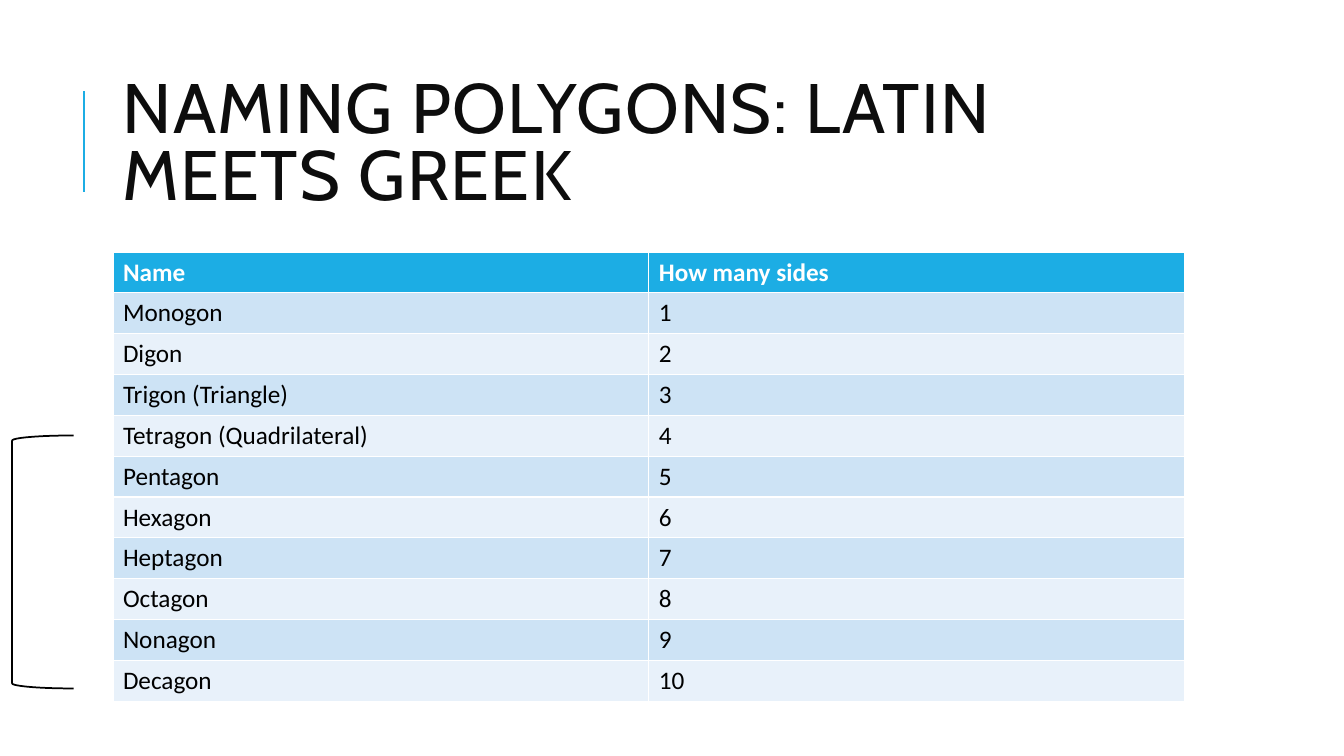
from lxml import etree
from pptx import Presentation
from pptx.dml.color import RGBColor
from pptx.enum.shapes import MSO_CONNECTOR, MSO_SHAPE
from pptx.enum.text import MSO_ANCHOR
from pptx.oxml.ns import qn
from pptx.util import Inches, Pt

BLUE = RGBColor(0x1C, 0xAD, 0xE4)
BAND_DARK = RGBColor(0xCD, 0xE3, 0xF5)
BAND_LIGHT = RGBColor(0xE8, 0xF1, 0xFA)
INK = RGBColor(0x0D, 0x0D, 0x0D)
BLACK = RGBColor(0, 0, 0)
WHITE = RGBColor(0xFF, 0xFF, 0xFF)

POLYGONS = ["Monogon", "Digon", "Trigon (Triangle)", "Tetragon (Quadrilateral)",
            "Pentagon", "Hexagon", "Heptagon", "Octagon", "Nonagon", "Decagon"]


def add_run(p, text, **fmt):
    r = p.add_run()
    r.text = text
    color = fmt.pop("color")
    for name, value in fmt.items():
        setattr(r.font, name, value)
    r.font.color.rgb = color
    return r


prs = Presentation()
prs.slide_width, prs.slide_height = Inches(13.33), Inches(7.5)
s = prs.slides.add_slide(prs.slide_layouts[6])

# Accent line beside the title
accent = s.shapes.add_connector(MSO_CONNECTOR.STRAIGHT, Inches(0.83), Inches(1.9),
                                Inches(0.83), Inches(0.9))
accent.line.color.rgb = BLUE
accent.line.width = Pt(1.5)
etree.SubElement(accent._element.spPr, qn("a:effectLst"))

# Title
title = s.shapes.add_textbox(Inches(1.12), Inches(0.64), Inches(10.63), Inches(1.64))
tf = title.text_frame
tf.word_wrap = True
tf.vertical_anchor = MSO_ANCHOR.MIDDLE
p = tf.paragraphs[0]
p.line_spacing = 0.8
r = add_run(p, "NAMING POLYGONS: LATIN MEETS GREEK", name="Cabin", size=Pt(50), color=INK)
r.font._element.set("spc", "100")

# Table of names and side counts; its default style draws the white borders
rows = [("Name", "How many sides")]
rows += [(name, str(sides)) for sides, name in enumerate(POLYGONS, 1)]
table = s.shapes.add_table(len(rows), 2, Inches(1.12), Inches(2.5),
                           Inches(10.63), Inches(4.46)).table
for i, row in enumerate(rows):
    header = i == 0
    fill = BLUE if header else BAND_DARK if i % 2 else BAND_LIGHT
    for j, text in enumerate(row):
        cell = table.cell(i, j)
        cell.fill.solid()
        cell.fill.fore_color.rgb = fill
        add_run(cell.text_frame.paragraphs[0], text, name="Calibri", size=Pt(18),
                bold=header, color=WHITE if header else BLACK)

# Bracket around the rows from four to ten sides
bracket = s.shapes.add_shape(MSO_SHAPE.LEFT_BRACKET, Inches(0.12), Inches(4.32),
                             Inches(0.61), Inches(2.51))
bracket.shadow.inherit = False
bracket.fill.background()
bracket.line.color.rgb = BLACK
bracket.line.width = Pt(1.25)

prs.save("out.pptx")
